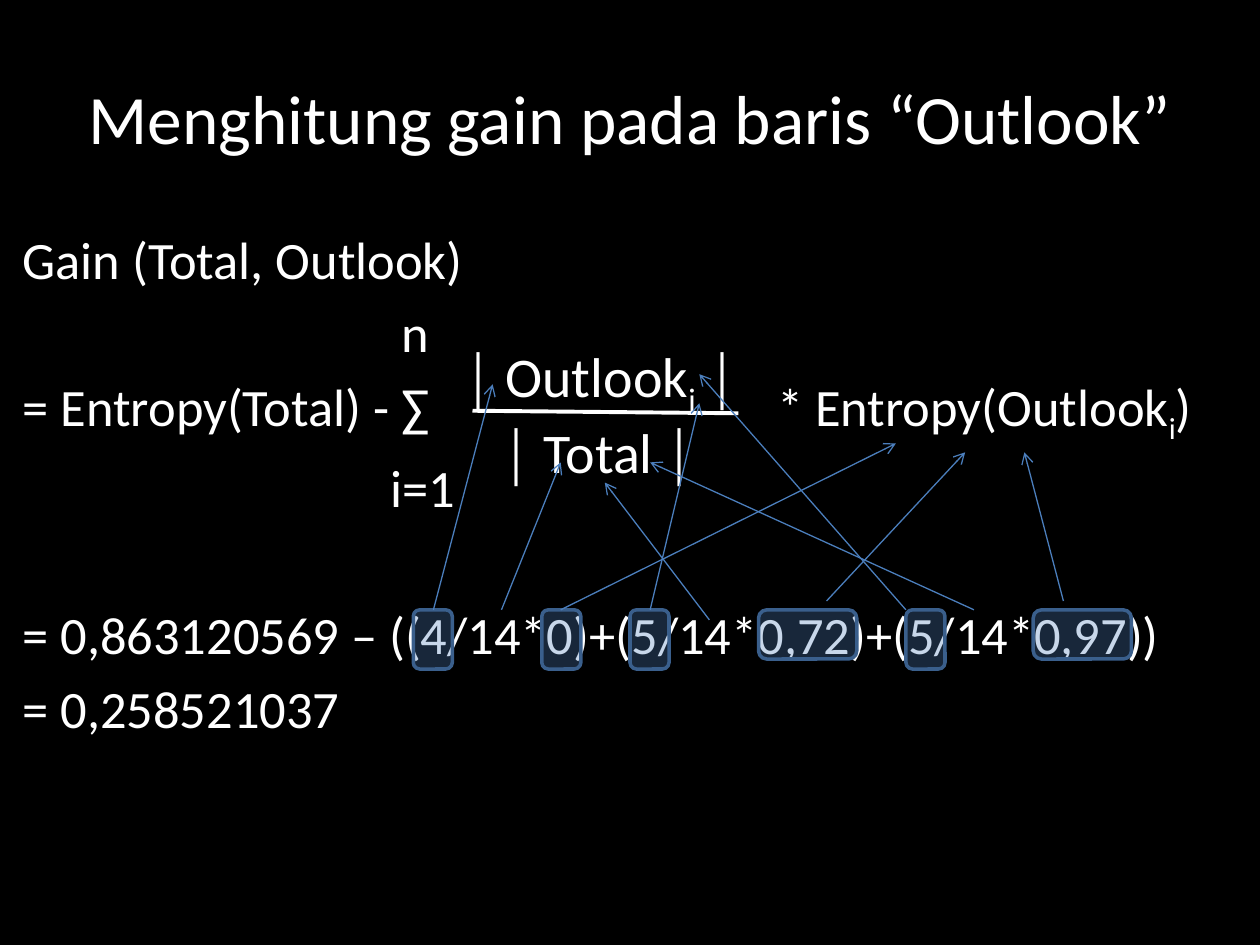
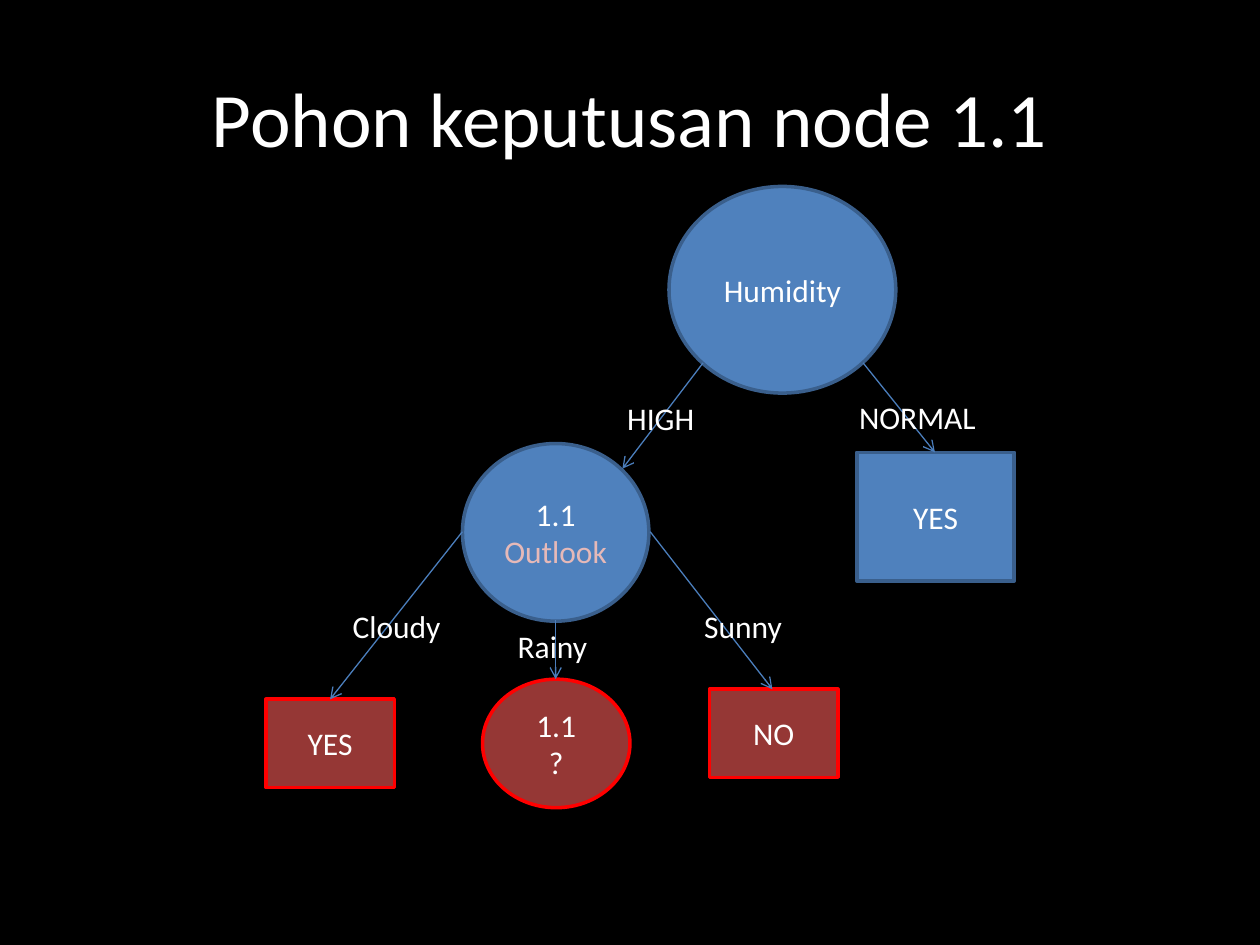
import lxml.etree
import pptx
import pptx.dml.color
import pptx.enum.shapes
import pptx.enum.text
import pptx.oxml.ns
import pptx.util

Inches = pptx.util.Inches
Pt = pptx.util.Pt
RGBColor = pptx.dml.color.RGBColor
Shape = pptx.enum.shapes.MSO_SHAPE
Anchor = pptx.enum.text.MSO_ANCHOR
Align = pptx.enum.text.PP_ALIGN
AutoSize = pptx.enum.text.MSO_AUTO_SIZE
qn = pptx.oxml.ns.qn
SubElement = lxml.etree.SubElement

BLACK = RGBColor(0x00, 0x00, 0x00)
WHITE = RGBColor(0xFF, 0xFF, 0xFF)
BLUE = RGBColor(0x4F, 0x81, 0xBD)
BLUE_EDGE = RGBColor(0x3A, 0x5F, 0x8C)
ARROW_BLUE = RGBColor(0x4B, 0x7E, 0xBC)
DARK_RED = RGBColor(0x95, 0x37, 0x35)
RED = RGBColor(0xFF, 0x00, 0x00)
PINK = RGBColor(0xE6, 0xB9, 0xB8)
FONT = "Calibri"


def add_span(para, text, size, color=WHITE, subscript=False):
    span = para.add_run()
    span.text = text
    span.font.name = FONT
    span.font.size = Pt(size)
    span.font.color.rgb = color
    if subscript:
        span._r.get_or_add_rPr().set("baseline", "-25000")


def add_line(shapes, ends, color=ARROW_BLUE, width=0.75, arrow=True):
    line = shapes.add_connector(
        pptx.enum.shapes.MSO_CONNECTOR.STRAIGHT, *[Inches(end) for end in ends])
    line.line.color.rgb = color
    line.line.width = Pt(width)
    if arrow:
        SubElement(line.line._get_or_add_ln(), qn("a:tailEnd"), type="arrow")
    SubElement(line._element.spPr, qn("a:effectLst"))


deck = pptx.Presentation()
deck.slide_width = Inches(10)
deck.slide_height = Inches(7.5)
deck.slide_master.background.fill.solid()
deck.slide_master.background.fill.fore_color.rgb = BLACK

pages = []
for layout, heading, size in [
    (1, "Menghitung gain pada baris “Outlook”", 39.6),
    (5, "Pohon keputusan node 1.1", 44),
]:
    page = deck.slides.add_slide(deck.slide_layouts[layout])
    title = page.shapes.title
    title.left, title.top = Inches(0.5), Inches(0.3)
    title.width, title.height = Inches(9), Inches(1.25)
    title.text_frame.auto_size = AutoSize.NONE
    title.text_frame.vertical_anchor = Anchor.MIDDLE
    para = title.text_frame.paragraphs[0]
    para.alignment = Align.CENTER
    add_span(para, heading, size)
    pages.append(page)

gain_page, tree_page = pages

body = gain_page.placeholders[1]
body.left, body.top = Inches(0.08), Inches(1.75)
body.width, body.height = Inches(9.77), Inches(4.81)
body.text_frame.auto_size = AutoSize.NONE
for number, (indent, gap, text) in enumerate([
    (0, 0, "Gain (Total, Outlook)"),
    (3.01, 6, "n"),
    (0, 6, "= Entropy(Total) - ∑"),
    (2.92, 10.6, "i=1"),
    (0, 48, "= 0,863120569 – ((4/14*0)+(5/14*0,72)+(5/14*0,97))"),
    (0, 6, "= 0,258521037"),
]):
    frame = body.text_frame
    para = frame.add_paragraph() if number else frame.paragraphs[0]
    properties = para._p.get_or_add_pPr()
    properties.set("marL", str(Inches(indent)))
    properties.set("indent", "0")
    SubElement(properties, qn("a:buNone"))
    para.space_before = Pt(gap)
    add_span(para, text, 30)

entropy = gain_page.shapes.add_textbox(
    Inches(6.07), Inches(2.92), Inches(3.6), Inches(0.65))
entropy.text_frame.word_wrap = True
for text in ["* Entropy(Outlook", "i", ")"]:
    add_span(entropy.text_frame.paragraphs[0], text, 30, subscript=text == "i")

fraction = gain_page.shapes.add_group_shape()
box = fraction.shapes.add_textbox(
    Inches(3.59), Inches(2.66), Inches(2.42), Inches(1.18))
box.text_frame.word_wrap = False
box.text_frame.auto_size = AutoSize.SHAPE_TO_FIT_TEXT
numerator = box.text_frame.paragraphs[0]
for text in ["│ Outlook", "i", " │"]:
    add_span(numerator, text, 32, subscript=text == "i")
denominator = box.text_frame.add_paragraph()
denominator._p.get_or_add_pPr().set("marL", str(Inches(0.3)))
add_span(denominator, "│ Total │", 32)
add_line(fraction.shapes, (3.75, 3.26, 5.86, 3.28), WHITE, 2.25, False)

narrow, wide = (0.31, 0.47), (0.78, 0.39)
for left, (width, height) in [
    (3.28, narrow), (4.3, narrow), (5, narrow),
    (6.02, wide), (7.19, narrow), (8.2, wide),
]:
    marker = gain_page.shapes.add_shape(
        Shape.ROUNDED_RECTANGLE,
        Inches(left), Inches(4.84), Inches(width), Inches(height))
    marker.shadow.inherit = False
    marker.fill.solid()
    marker.fill.fore_color.rgb = BLUE
    fill_color = marker._element.spPr.find(qn("a:solidFill"))[0]
    SubElement(fill_color, qn("a:alpha"), val="31000")
    marker.line.color.rgb = BLUE_EDGE
    marker.line.width = Pt(2)

for ends in [
    (4.45, 4.84, 7.11, 3.52),
    (6.56, 4.77, 7.66, 3.59),
    (8.44, 4.77, 8.13, 3.59),
    (3.44, 4.84, 3.91, 3.05),
    (7.19, 4.84, 5.55, 2.97),
    (5.16, 4.84, 5.55, 3.2),
    (3.98, 4.84, 4.45, 3.67),
    (5.63, 4.92, 4.8, 3.83),
    (7.73, 4.84, 5.16, 3.67),
]:
    add_line(gain_page.shapes, ends)

known, new = (BLUE, BLUE_EDGE), (DARK_RED, RED)
for kind, place, (fill, edge), lines in [
    (Shape.OVAL, (5.31, 1.48, 1.8, 1.64), known, [("Humidity", WHITE)]),
    (Shape.OVAL, (3.67, 3.52, 1.48, 1.41), known, [("1.1", WHITE), ("Outlook", PINK)]),
    (Shape.RECTANGLE, (6.8, 3.59, 1.25, 1.02), known, [("YES", WHITE)]),
    (Shape.OVAL, (3.83, 5.39, 1.17, 1.02), new, [("1.1", WHITE), ("?", WHITE)]),
    (Shape.RECTANGLE, (2.11, 5.55, 1.02, 0.7), new, [("YES", WHITE)]),
    (Shape.RECTANGLE, (5.63, 5.47, 1.02, 0.7), new, [("NO", WHITE)]),
]:
    node = tree_page.shapes.add_shape(kind, *[Inches(value) for value in place])
    node.shadow.inherit = False
    node.fill.solid()
    node.fill.fore_color.rgb = fill
    node.line.color.rgb = edge
    node.line.width = Pt(2)
    frame = node.text_frame
    frame.word_wrap = True
    frame.vertical_anchor = Anchor.MIDDLE
    for number, (text, color) in enumerate(lines):
        para = frame.add_paragraph() if number else frame.paragraphs[0]
        para.alignment = Align.CENTER
        add_span(para, text, 18, color)

for ends in [
    (5.58, 2.88, 4.94, 3.72),
    (6.85, 2.88, 7.42, 3.59),
    (3.67, 4.22, 2.62, 5.55),
    (4.41, 4.92, 4.41, 5.39),
    (5.16, 4.22, 6.13, 5.47),
]:
    add_line(tree_page.shapes, ends)

for text, left, top, width in [
    ("NORMAL", 6.72, 3.11, 1.14),
    ("HIGH", 4.88, 3.12, 0.74),
    ("Cloudy", 2.7, 4.77, 0.91),
    ("Rainy", 4.01, 4.93, 0.76),
    ("Sunny", 5.49, 4.77, 0.83),
]:
    label = tree_page.shapes.add_textbox(
        Inches(left), Inches(top), Inches(width), Inches(0.4))
    label.text_frame.word_wrap = False
    label.text_frame.auto_size = AutoSize.SHAPE_TO_FIT_TEXT
    add_span(label.text_frame.paragraphs[0], text, 18)

deck.save("out.pptx")
